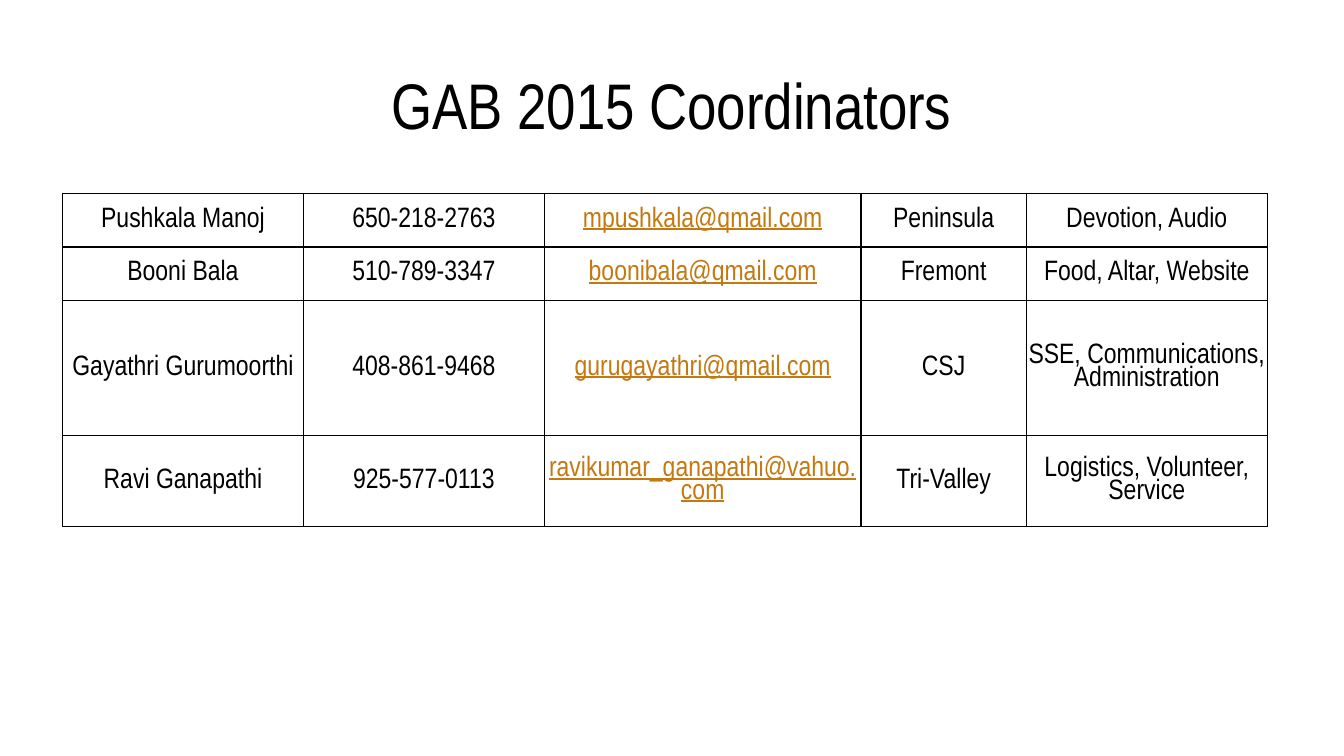
import pptx
import pptx.util
import pptx.dml.color
import pptx.enum.text
import pptx.oxml
import pptx.oxml.ns

Inches, Pt = pptx.util.Inches, pptx.util.Pt
ALIGN = pptx.enum.text.PP_ALIGN
MIDDLE = pptx.enum.text.MSO_ANCHOR.MIDDLE

# Content
TITLE = "GAB 2015 Coordinators"
PEOPLE = [
    ("Pushkala Manoj", "650-218-2763", "mpushkala@qmail.com",
     "Peninsula", "Devotion, Audio"),
    ("Booni Bala", "510-789-3347", "boonibala@qmail.com",
     "Fremont", "Food, Altar, Website"),
    ("Gayathri Gurumoorthi", "408-861-9468", "gurugayathri@qmail.com",
     "CSJ", "SSE, Communications, Administration"),
    ("Ravi Ganapathi", "925-577-0113", "ravikumar_ganapathi@vahuo.com",
     "Tri-Valley", "Logistics, Volunteer, Service"),
]
MAIL = 2
WIDTHS = [2.39, 2.39, 3.14, 1.64, 2.39]
HEIGHTS = [0.53, 0.53, 1.34, 0.9]
COLORS = {"text": "000000", "mail": "C47810", "line": "000000"}
FONT = "Arial Narrow"


def write(frame, text, size=20, color="text", under=False, spacing=None):
    para = frame.paragraphs[0]
    para.alignment = ALIGN.CENTER
    para.line_spacing = spacing
    run = para.add_run()
    run.text = text
    font = run.font
    font.name, font.size = FONT, Pt(size)
    font.bold, font.underline = False, under
    font.color.rgb = pptx.dml.color.RGBColor.from_string(COLORS[color])


def border(cell):
    props = cell._tc.get_or_add_tcPr()
    for at, side in enumerate(("lnL", "lnR", "lnT", "lnB")):
        props.insert(at, pptx.oxml.parse_xml(
            f'<a:{side} {pptx.oxml.ns.nsdecls("a")} w="{Pt(1)}">'
            f'<a:solidFill><a:srgbClr val="{COLORS["line"]}"/></a:solidFill>'
            f'</a:{side}>'))


# Slide
deck = pptx.Presentation()
deck.slide_width, deck.slide_height = Inches(13.33), Inches(7.5)
slide = deck.slides.add_slide(deck.slide_layouts[5])

# Title
title = slide.shapes.title
title.left, title.top = Inches(1.33), Inches(0.55)
title.width, title.height = Inches(10.66), Inches(0.95)
frame = title.text_frame
frame.auto_size = pptx.enum.text.MSO_AUTO_SIZE.NONE
frame.vertical_anchor = MIDDLE
write(frame, TITLE, size=46)

# Table of coordinators
table = slide.shapes.add_table(
    len(PEOPLE), len(WIDTHS), Inches(0.62), Inches(1.92),
    Inches(sum(WIDTHS)), Inches(sum(HEIGHTS))).table
table.first_row = table.horz_banding = False
for col, width in zip(table.columns, WIDTHS):
    col.width = Inches(width)
for row, height in zip(table.rows, HEIGHTS):
    row.height = Inches(height)

for row, person in zip(table.rows, PEOPLE):
    for at, (cell, text) in enumerate(zip(row.cells, person)):
        cell.fill.background()
        cell.vertical_anchor = MIDDLE
        cell.margin_left = cell.margin_right = cell.margin_top = Inches(0.01)
        cell.margin_bottom = 0
        border(cell)
        mail = at == MAIL
        write(cell.text_frame, text, color="mail" if mail else "text",
              under=mail, spacing=0.85)

deck.save("out.pptx")
